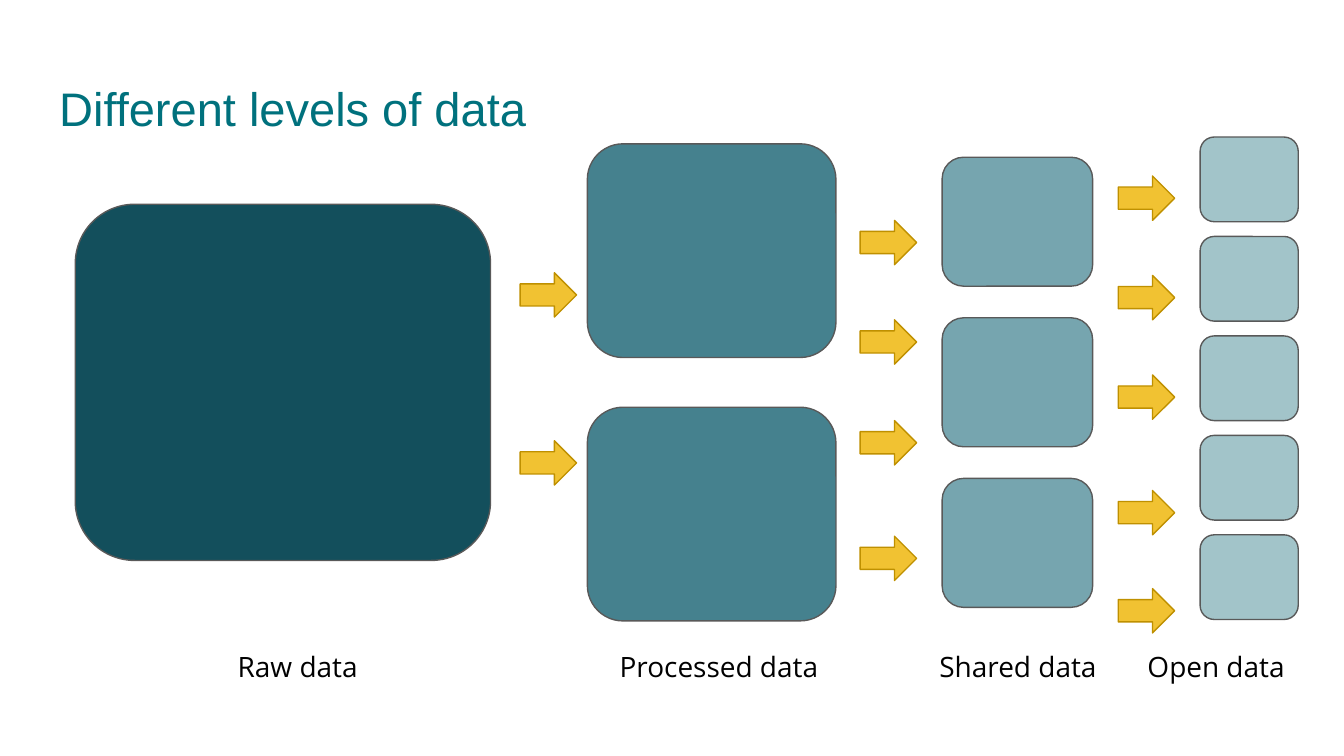
from dataclasses import dataclass

from pptx import Presentation
from pptx.dml.color import RGBColor
from pptx.enum.shapes import MSO_SHAPE
from pptx.enum.text import MSO_ANCHOR, PP_ALIGN
from pptx.util import Inches, Pt


@dataclass(frozen=True)
class Theme:
    """Colours, fonts and sizes of the slide."""
    title: str = "00717D"
    label: str = "000000"
    outline: str = "595959"
    arrow: str = "F1C232"
    arrow_outline: str = "BF9000"
    levels: tuple = ("134F5C", "45818E", "76A5AF", "A2C4C9")
    title_font: str = "Arial"
    label_font: str = "Open Sans"
    title_size: float = 25.2
    label_size: float = 15
    line_width: float = 0.75


@dataclass(frozen=True)
class Box:
    """A rectangle in inches."""
    left: float
    top: float
    width: float
    height: float

    def lengths(self):
        """Return the rectangle as slide lengths."""
        return [Inches(v) for v in (self.left, self.top, self.width, self.height)]


THEME = Theme()


def write_text(holder, text, *, font, size, color, align=PP_ALIGN.LEFT):
    """Write one formatted paragraph into a text frame or cell."""
    holder.margin_left = holder.margin_right = Inches(0.1)
    holder.margin_top = holder.margin_bottom = Inches(0.1)
    holder.vertical_anchor = MSO_ANCHOR.TOP
    frame = getattr(holder, "text_frame", holder)
    frame.word_wrap = True
    para = frame.paragraphs[0]
    para.alignment = align
    span = para.add_run()
    span.text = text
    span.font.name = font
    span.font.size = Pt(size)
    span.font.bold = False
    span.font.color.rgb = RGBColor.from_string(color)


def add_block(page, kind, box, fill, outline):
    """Add a filled and outlined preset shape."""
    block = page.shapes.add_shape(kind, *box.lengths())
    block.shadow.inherit = False
    block.fill.solid()
    block.fill.fore_color.rgb = RGBColor.from_string(fill)
    block.line.color.rgb = RGBColor.from_string(outline)
    block.line.width = Pt(THEME.line_width)


def add_title(page, box, text):
    """Place the title in its placeholder."""
    title = page.shapes.title
    title.left, title.top, title.width, title.height = box.lengths()
    write_text(title.text_frame, text, font=THEME.title_font,
               size=THEME.title_size, color=THEME.title)


def add_level(page, box, count, block_height, fill):
    """Spread equal rounded blocks down the height of the box."""
    step = (box.height - block_height) / max(count - 1, 1)
    for index in range(count):
        block = Box(box.left, box.top + index * step, box.width, block_height)
        add_block(page, MSO_SHAPE.ROUNDED_RECTANGLE, block, fill, THEME.outline)


def add_arrows(page, box, offsets):
    """Stack arrows at offsets below the top of the first arrow's box."""
    for offset in offsets:
        arrow = Box(box.left, box.top + offset, box.width, box.height)
        add_block(page, MSO_SHAPE.RIGHT_ARROW, arrow, THEME.arrow, THEME.arrow_outline)


def add_labels(page, box, labels):
    """Name the levels in a one-row table without fills."""
    table = page.shapes.add_table(1, len(labels), *box.lengths()).table
    table.first_row = False
    table.horz_banding = False
    for index, (text, width, align) in enumerate(labels):
        table.columns[index].width = Inches(width)
        cell = table.cell(0, index)
        cell.fill.background()
        write_text(cell, text, font=THEME.label_font, size=THEME.label_size,
                   color=THEME.label, align=align)


def build_levels_slide(deck, box):
    """Build the slide that narrows raw data down to open data."""
    page = deck.slides.add_slide(deck.slide_layouts[5])
    left, top = box.left, box.top
    add_title(page, Box(left + 0.34, top + 0.49, 9.32, 0.63), "Different levels of data")

    levels = [
        (Box(left + 0.56, top + 1.52, 3.09, 2.65), 1, 2.65),
        (Box(left + 4.37, top + 1.07, 1.85, 3.55), 2, 1.59),
        (Box(left + 7.01, top + 1.17, 1.12, 3.35), 3, 0.96),
        (Box(left + 8.93, top + 1.02, 0.73, 3.59), 5, 0.63),
    ]
    for (area, count, height), fill in zip(levels, THEME.levels):
        add_level(page, area, count, height, fill)

    arrows = [
        (3.87, 2.03, (0, 1.25)),
        (6.4, 1.64, (0, 0.74, 1.49, 2.35)),
        (8.32, 1.31, (0, 0.74, 1.48, 2.34, 3.07)),
    ]
    for arrow_left, arrow_top, offsets in arrows:
        add_arrows(page, Box(left + arrow_left, top + arrow_top, 0.42, 0.33), offsets)

    add_labels(page, Box(left + 0.56, top + 4.72, 9.1, 0.45), [
        ("Raw data", 3.31, PP_ALIGN.CENTER),
        ("Processed data", 2.96, PP_ALIGN.CENTER),
        ("Shared data", 1.49, PP_ALIGN.CENTER),
        ("Open data", 1.34, PP_ALIGN.RIGHT),
    ])


def main():
    """Create and save a widescreen deck."""
    deck = Presentation()
    deck.slide_width = Inches(10)
    deck.slide_height = Inches(10 * 9 / 16)
    build_levels_slide(deck, Box(0, 0, 10, 10 * 9 / 16))
    deck.save("out.pptx")


if __name__ == "__main__":
    main()
